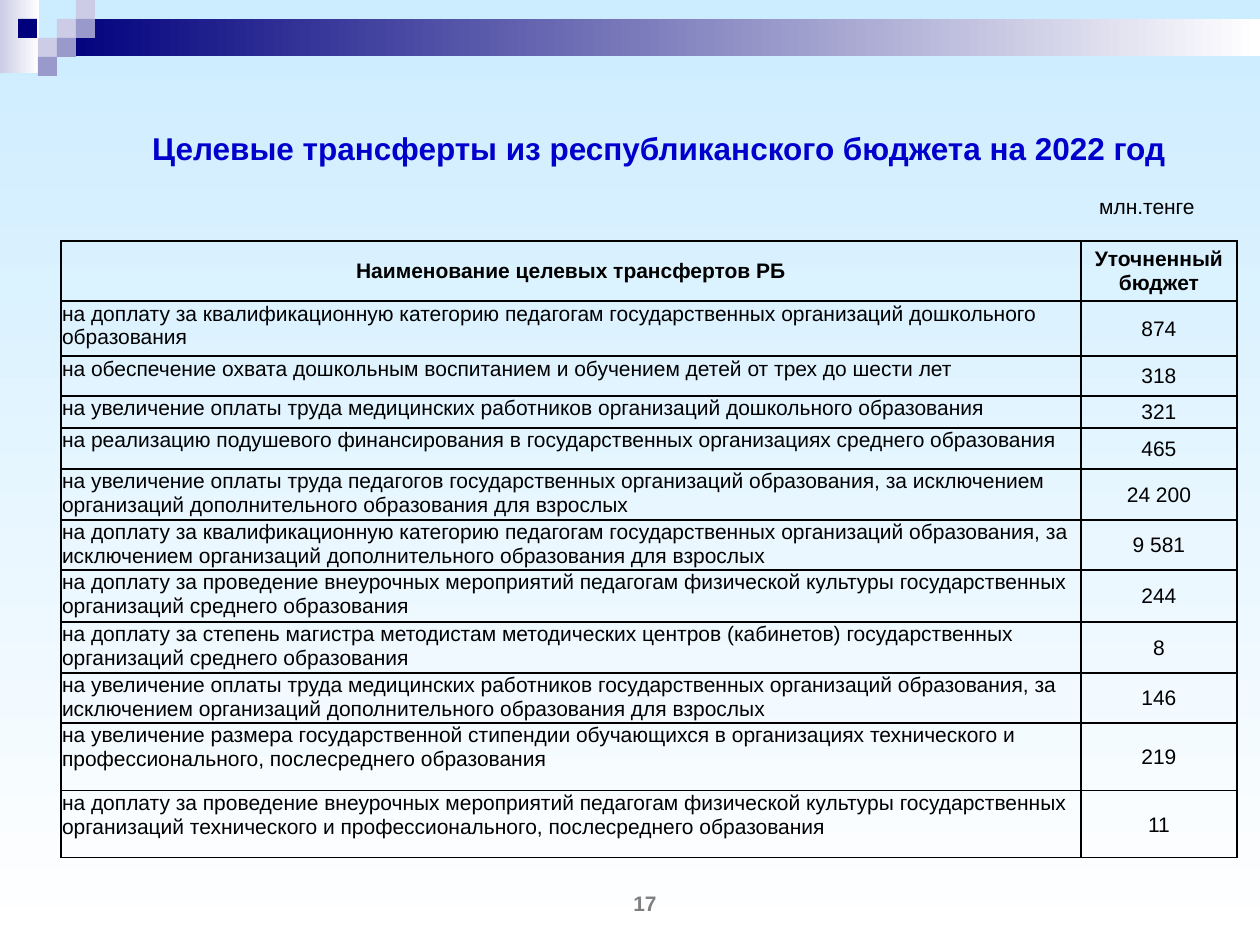
from lxml import etree
from pptx import Presentation
from pptx.dml.color import RGBColor
from pptx.enum.shapes import MSO_SHAPE
from pptx.enum.text import MSO_ANCHOR, PP_ALIGN
from pptx.oxml.ns import qn
from pptx.util import Pt

PX = 914400 // 126
RECT = MSO_SHAPE.RECTANGLE
MIDDLE, TOP = MSO_ANCHOR.MIDDLE, MSO_ANCHOR.TOP
CENTER, LEFT = PP_ALIGN.CENTER, PP_ALIGN.LEFT
FONT = "Arial"
COLORS = {
    "sky": "CCECFF", "white": "FFFFFF", "navy": "00007D", "pale": "CCCCE6",
    "mauve": "9999CC", "title": "0000CC", "text": "000000", "page": "7F7F7F",
}
STEP = 19
SQUARES = [  # left, row, colour
    (57, 1, "pale"), (76, 0, "pale"), (76, 1, "mauve"), (38, 2, "pale"),
    (18, 1, "navy"), (57, 2, "mauve"), (38, 3, "mauve"),
]
COLS = [1020, 156]
HEAD = (60, "Наименование целевых трансфертов РБ", "Уточненный бюджет")
ROWS = [  # height, purpose, amount
    (55, "на доплату за квалификационную категорию педагогам государственных организаций дошкольного образования", "874"),
    (40, "на обеспечение охвата дошкольным воспитанием и обучением детей от трех до шести лет", "318"),
    (32, "на увеличение оплаты труда медицинских работников организаций дошкольного образования", "321"),
    (41, "на реализацию подушевого финансирования в государственных организациях среднего образования", "465"),
    (51, "на увеличение оплаты труда педагогов государственных организаций образования, за исключением организаций дополнительного образования для взрослых", "24 200"),
    (50, "на доплату за квалификационную категорию педагогам государственных организаций образования, за исключением организаций дополнительного образования для взрослых", "9 581"),
    (52, "на доплату за проведение внеурочных мероприятий педагогам физической культуры государственных организаций среднего образования", "244"),
    (51, "на доплату за степень магистра методистам методических центров (кабинетов) государственных организаций среднего образования", "8"),
    (50, "на увеличение оплаты труда медицинских работников государственных организаций образования, за исключением организаций дополнительного образования для взрослых", "146"),
    (68, "на увеличение размера государственной стипендии обучающихся в организациях технического и профессионального, послесреднего образования", "219"),
    (67, "на доплату за проведение внеурочных мероприятий педагогам физической культуры государственных организаций технического и профессионального, послесреднего образования", "11"),
]


def rgb(name):
    return RGBColor.from_string(COLORS[name])


def fade(fill, start, angle):
    """Gradient from a colour to white; the angle runs anticlockwise."""
    fill.gradient()
    fill.gradient_angle = angle
    for stop, name in zip(fill.gradient_stops, (start, "white")):
        stop.color.rgb = rgb(name)


def add_rect(slide, box, color, faded=False):
    shape = slide.shapes.add_shape(RECT, *[n * PX for n in box])
    shape.shadow.inherit = False
    shape.line.fill.background()
    if faded:
        fade(shape.fill, color, 0)
    else:
        shape.fill.solid()
        shape.fill.fore_color.rgb = rgb(color)


def write(frame, text, color="text", size=12, bold=False, align=CENTER):
    frame.text = text
    frame.word_wrap = True
    para = frame.paragraphs[0]
    para.alignment = align
    font = para.runs[0].font
    font.name, font.size, font.bold = FONT, Pt(size), bold
    font.color.rgb = rgb(color)


def place(shape, box):
    shape.left, shape.top, shape.width, shape.height = [n * PX for n in box]


def add_title(slide, text, box):
    title = slide.shapes.title
    place(title, box)
    write(title.text_frame, text, "title", 18, True)
    title.text_frame.vertical_anchor = MIDDLE


def add_label(slide, text, box, color="text", bold=False):
    frame = slide.shapes.add_textbox(*[n * PX for n in box]).text_frame
    write(frame, text, color, bold=bold)
    frame.vertical_anchor = MIDDLE


def add_border(cell):
    props = cell._tc.get_or_add_tcPr()
    for side in "LRTB":
        line = etree.SubElement(props, qn(f"a:ln{side}"), w=str(Pt(1)))
        fill = etree.SubElement(line, qn("a:solidFill"))
        etree.SubElement(fill, qn("a:srgbClr"), val=COLORS["text"])


def fill_cell(cell, text, head, align, anchor):
    add_border(cell)
    cell.fill.background()
    side, top, foot = (13, 6, 6) if head else (1, 1, 0)
    cell.margin_left = cell.margin_right = side * PX
    cell.margin_top, cell.margin_bottom = top * PX, foot * PX
    cell.vertical_anchor = anchor
    write(cell.text_frame, text, bold=head, align=align)


def add_grid(slide, left, top):
    rows = [HEAD] + ROWS
    high = sum(row[0] for row in rows)
    box = [n * PX for n in (left, top, sum(COLS), high)]
    table = slide.shapes.add_table(len(rows), len(COLS), *box).table
    table.first_row = table.horz_banding = False
    for col, width in zip(table.columns, COLS):
        col.width = width * PX
    for i, (height, name, value) in enumerate(rows):
        head = i == 0
        table.rows[i].height = height * PX
        align, anchor = (CENTER, MIDDLE) if head else (LEFT, TOP)
        fill_cell(table.cell(i, 0), name, head, align, anchor)
        fill_cell(table.cell(i, 1), value, head, CENTER, MIDDLE)


def main():
    deck = Presentation()
    deck.slide_width, deck.slide_height = 1260 * PX, 945 * PX
    slide = deck.slides.add_slide(deck.slide_layouts[5])
    fade(slide.background.fill, "sky", 270)
    add_rect(slide, (0, 0, 39, 73), "pale", True)
    add_rect(slide, (57, 19, 1203, 37), "navy", True)
    for left, row, color in SQUARES:
        add_rect(slide, (left, row * STEP, STEP, STEP), color)
    add_title(slide, "Целевые трансферты из республиканского бюджета на 2022 год",
              (58, 127, 1202, 42))
    add_grid(slide, 61, 241)
    add_label(slide, "млн.тенге", (1060, 192, 174, 28))
    add_label(slide, "17", (519, 892, 252, 22), "page", True)
    deck.save("out.pptx")


if __name__ == "__main__":
    main()
